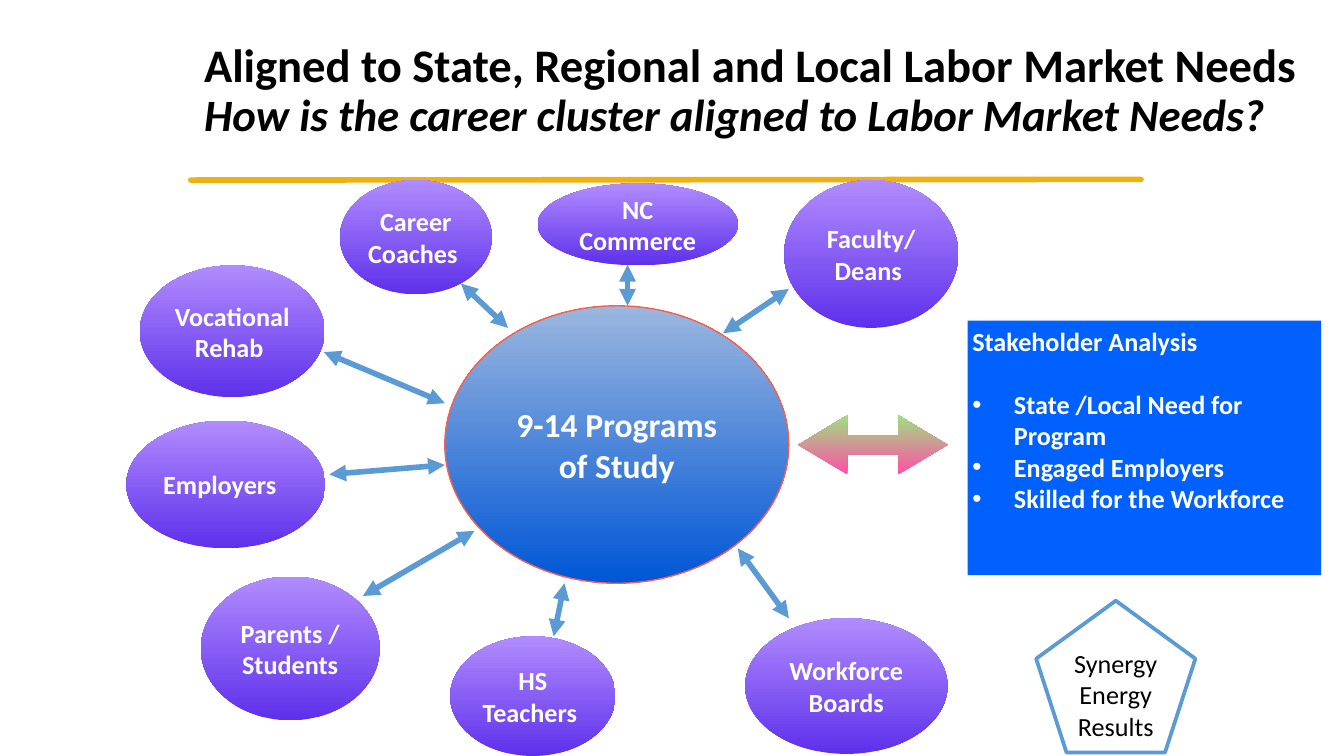
import pptx
import pptx.dml.color
import pptx.enum.shapes
import pptx.enum.text
import pptx.oxml.ns
import pptx.util
from lxml import etree

PX = 4572
FONT = "Calibri"
SHAPE = pptx.enum.shapes.MSO_SHAPE
ANCHOR = pptx.enum.text.MSO_ANCHOR
ALIGN = pptx.enum.text.PP_ALIGN
COLORS = {
    "black": "000000",
    "white": "FFFFFF",
    "gold": "EEB111",
    "panel": "0061FE",
    "violet": "5E30EB",
    "lilac": "B18CFE",
    "navy": "0056D6",
    "mist": "9BB7DF",
    "pink": "FF4FA7",
    "green": "9EE081",
    "coral": "FD5E48",
    "steel": "5B9BD5",
}


def emu(*lengths):
    return [pptx.util.Emu(length * PX) for length in lengths]


def rgb(name):
    return pptx.dml.color.RGBColor.from_string(COLORS[name])


def add_element(parent, tag, **attributes):
    return etree.SubElement(parent, pptx.oxml.ns.qn(tag), **attributes)


class SlideBuilder:
    def __init__(self, page):
        self.page = page

    def shape(self, kind, area, fill, line=None, weight=1):
        shape = self.page.shapes.add_shape(kind, *emu(*area))
        shape.shadow.inherit = False
        if isinstance(fill, tuple):
            shape.fill.gradient()
            shape.fill.gradient_angle = 90
            for stop, name in zip(shape.fill.gradient_stops, fill):
                stop.color.rgb = rgb(name)
        else:
            shape.fill.solid()
            shape.fill.fore_color.rgb = rgb(fill)
        if line:
            shape.line.color.rgb = rgb(line)
            shape.line.width = pptx.util.Pt(weight)
        else:
            shape.line.fill.background()
        return shape

    def frame(self, box, inset, anchor):
        frame = box.text_frame
        frame.word_wrap = True
        frame.vertical_anchor = anchor
        frame.margin_left, frame.margin_right = emu(inset, inset)
        frame.margin_top, frame.margin_bottom = emu(inset, inset)
        return frame

    def span(self, para, text, size, color, bold=True, italic=False):
        span = para.add_run()
        span.text = text
        span.font.name = FONT
        span.font.size = pptx.util.Pt(size)
        span.font.bold = bold
        span.font.italic = italic
        span.font.color.rgb = rgb(color)

    def label(self, shape, lines, size=14, color="white", bold=True):
        frame = self.frame(shape, 7, ANCHOR.MIDDLE)
        for index, line in enumerate(lines):
            para = frame.add_paragraph() if index else frame.paragraphs[0]
            para.alignment = ALIGN.CENTER
            self.span(para, line, size, color, bold)

    def bubble(self, text, area):
        shape = self.shape(SHAPE.OVAL, area, ("violet", "lilac"))
        self.label(shape, [text])

    def line(self, points, color, arrows=False):
        line = self.page.shapes.add_connector(
            pptx.enum.shapes.MSO_CONNECTOR.STRAIGHT, *emu(*points))
        line.line.color.rgb = rgb(color)
        line.line.width = pptx.util.Pt(3)
        outline = line.line._get_or_add_ln()
        if arrows:
            for end in ("a:headEnd", "a:tailEnd"):
                add_element(outline, end, type="triangle")
        else:
            outline.set("cap", "rnd")
        add_element(line._element.spPr, "a:effectLst")

    def title(self, area, heading, question):
        box = self.page.shapes.add_textbox(*emu(*area))
        para = self.frame(box, 20, ANCHOR.MIDDLE).paragraphs[0]
        para.line_spacing = 0.9
        self.span(para, heading, 25, "black")
        para.add_line_break()
        self.span(para, question, 24, "black", italic=True)

    def panel(self, area, heading, items):
        shape = self.shape(SHAPE.RECTANGLE, area, "panel")
        frame = self.frame(shape, 7, ANCHOR.TOP)
        para = frame.paragraphs[0]
        para.alignment = ALIGN.LEFT
        self.span(para, heading, 14, "white")
        indent = 62 * PX
        for index, item in enumerate(items):
            para = frame.add_paragraph()
            para.alignment = ALIGN.LEFT
            properties = para._p.get_or_add_pPr()
            properties.set("marL", str(indent))
            properties.set("indent", str(-indent))
            add_element(properties, "a:buFont", typeface="Arial")
            add_element(properties, "a:buChar", char="•")
            if index == 0:
                para.space_before = pptx.util.Pt(17)
            self.span(para, item, 14, "white")


def main():
    deck = pptx.Presentation()
    deck.slide_width, deck.slide_height = emu(2000, 1125)
    builder = SlideBuilder(deck.slides.add_slide(deck.slide_layouts[6]))

    builder.line((284, 268, 1698, 267), "gold")
    builder.panel((1440, 477, 526, 379), "Stakeholder Analysis", [
        "State /Local Need for Program",
        "Engaged Employers",
        "Skilled for the Workforce",
    ])

    stakeholders = [
        ("Faculty/ Deans ", (1167, 268, 259, 220)),
        ("Career Coaches ", (506, 268, 226, 170)),
        ("Vocational Rehab ", (208, 395, 275, 196)),
        ("Employers  ", (188, 626, 296, 190)),
        ("Parents / Students", (299, 858, 266, 214)),
        ("HS Teachers ", (670, 947, 246, 178)),
        ("Workforce Boards", (1109, 920, 301, 202)),
        ("NC Commerce", (800, 273, 298, 122)),
    ]
    for name, area in stakeholders:
        builder.bubble(name, area)

    exchange = builder.shape(
        SHAPE.LEFT_RIGHT_ARROW, (1188, 618, 222, 88), ("pink", "green"))
    exchange.adjustments[0] = 0.32
    exchange.adjustments[1] = 0.83

    programs = builder.shape(
        SHAPE.OVAL, (662, 455, 512, 413), ("navy", "mist"), "coral", 0.75)
    builder.label(programs, ["9-14 Programs of Study"], 18)

    links = [
        (490, 706, 662, 692),
        (482, 524, 662, 600),
        (1174, 430, 1076, 496),
        (1098, 816, 1174, 920),
        (840, 868, 824, 947),
        (706, 790, 540, 887),
        (686, 422, 756, 488),
        (934, 394, 934, 455),
    ]
    for points in links:
        builder.line(points, "steel", arrows=True)

    builder.title(
        (284, 27, 1738, 218),
        "Aligned to State, Regional and Local Labor Market Needs",
        "How is the career cluster aligned to Labor Market Needs?")

    synergy = builder.shape(
        SHAPE.REGULAR_PENTAGON, (1542, 894, 237, 226), "white", "steel", 2)
    builder.label(synergy, ["Synergy", "Energy", "Results"], 14, "black", False)

    deck.save("out.pptx")


if __name__ == "__main__":
    main()
